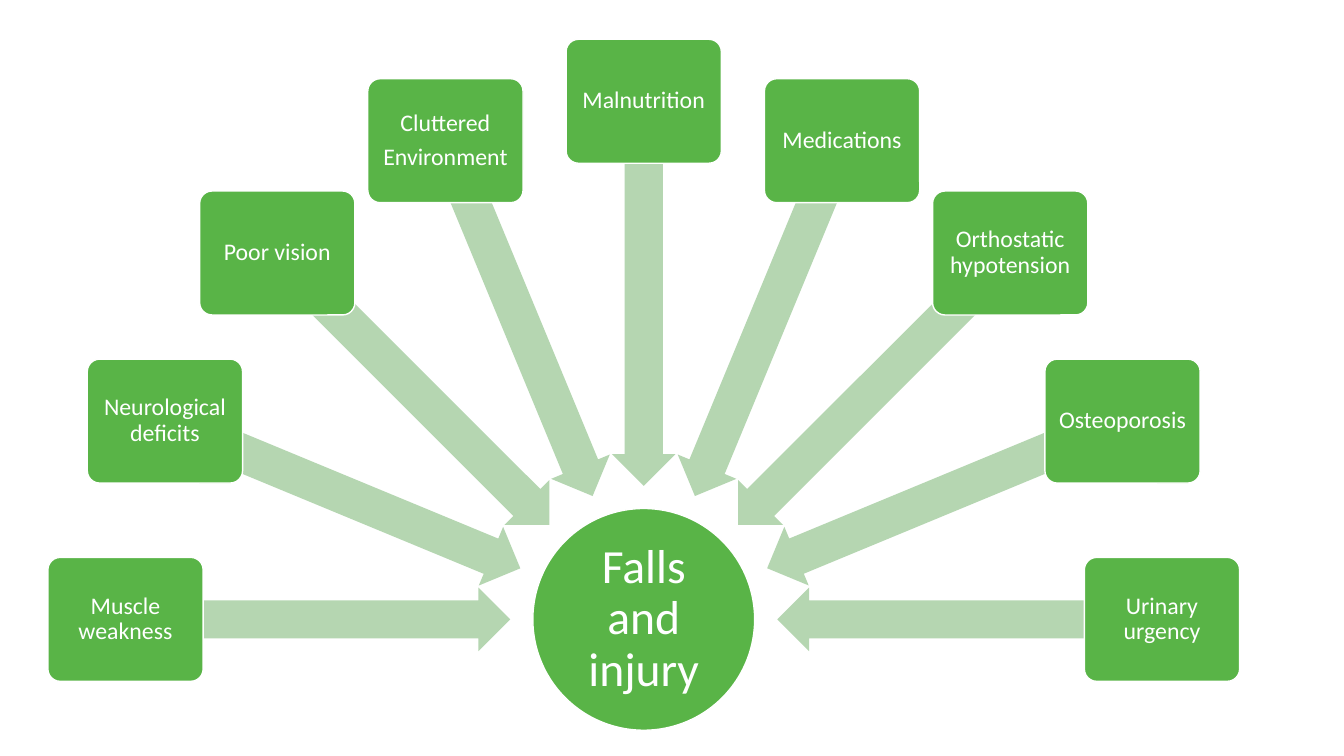
from dataclasses import dataclass
from math import cos, radians, sin

from pptx import Presentation
from pptx.dml.color import RGBColor
from pptx.enum.shapes import MSO_SHAPE as Preset
from pptx.enum.text import MSO_ANCHOR as Anchor, PP_ALIGN as Align
from pptx.util import Inches, Pt


@dataclass(frozen=True)
class Theme:
    font: str = "Calibri"
    node: RGBColor = RGBColor(0x59, 0xB4, 0x47)
    arrow: RGBColor = RGBColor(0xB5, 0xD6, 0xB1)
    light: RGBColor = RGBColor(0xFF, 0xFF, 0xFF)
    hub_size: int = 34
    cause_size: int = 17
    outline: int = 1
    line_spacing: float = 0.9
    space_after: float = 0.35  # share of the type size


class RadialDiagram:
    """Draws on one slide, on a grid of square cells 0.1 inch wide."""

    CELL = Inches(0.1)

    def __init__(self, slide, theme, center):
        self.slide = slide
        self.theme = theme
        self.center = center

    def place(self, preset, size, color, radius=0, angle=0):
        """Add a preset shape centred at a distance and angle from the hub."""
        width, height = size
        x = self.center[0] + radius * cos(radians(angle))
        y = self.center[1] + radius * sin(radians(angle))
        cells = (x - width / 2, y - height / 2, width, height)
        shape = self.slide.shapes.add_shape(
            preset, *(round(value * self.CELL) for value in cells))
        shape.shadow.inherit = False
        shape.fill.solid()
        shape.fill.fore_color.rgb = color
        shape.line.fill.background()
        return shape

    def label(self, shape, text, size, inset):
        theme = self.theme
        shape.line.color.rgb = theme.light
        shape.line.width = Pt(theme.outline)
        frame = shape.text_frame
        frame.word_wrap = True
        frame.vertical_anchor = Anchor.MIDDLE
        frame.margin_left = frame.margin_right = Inches(inset)
        frame.margin_top = frame.margin_bottom = Inches(inset)
        frame.text = text
        for paragraph in frame.paragraphs:
            paragraph.alignment = Align.CENTER
            paragraph.line_spacing = theme.line_spacing
            paragraph.space_after = Pt(round(size * theme.space_after))
            paragraph.font.name = theme.font
            paragraph.font.size = Pt(size)
            paragraph.font.color.rgb = theme.light

    def hub(self, text):
        circle = self.place(Preset.OVAL, (22, 22), self.theme.node)
        self.label(circle, text, self.theme.hub_size, 0.02)

    def arrow(self, angle):
        arrow = self.place(Preset.LEFT_ARROW, (38.1, 6.3), self.theme.arrow,
                           32.3, angle)
        arrow.rotation = angle % 360
        arrow.adjustments[0] = 0.6
        arrow.adjustments[1] = 0.5

    def cause(self, text, angle):
        box = self.place(Preset.ROUNDED_RECTANGLE, (15.4, 12.3),
                         self.theme.node, 51.4, angle)
        box.adjustments[0] = 0.1
        self.label(box, text, self.theme.cause_size, 0.04)


# Causes, clockwise from the left of the hub
CAUSES = [
    "Muscle weakness",
    "Neurological deficits",
    "Poor vision",
    "Cluttered\nEnvironment",
    "Malnutrition",
    "Medications",
    "Orthostatic hypotension",
    "Osteoporosis",
    "Urinary urgency",
]


def main():
    presentation = Presentation()
    presentation.slide_width = Inches(13.33)
    presentation.slide_height = Inches(7.5)
    slide = presentation.slides.add_slide(presentation.slide_layouts[6])
    diagram = RadialDiagram(slide, Theme(), center=(63.85, 61.45))

    # Central outcome
    diagram.hub("Falls and injury")

    # Causes spread evenly over the upper half circle
    step = 180 / (len(CAUSES) - 1)
    for index, text in enumerate(CAUSES):
        angle = 180 + index * step
        diagram.arrow(angle)
        diagram.cause(text, angle)

    presentation.save("out.pptx")


if __name__ == "__main__":
    main()
